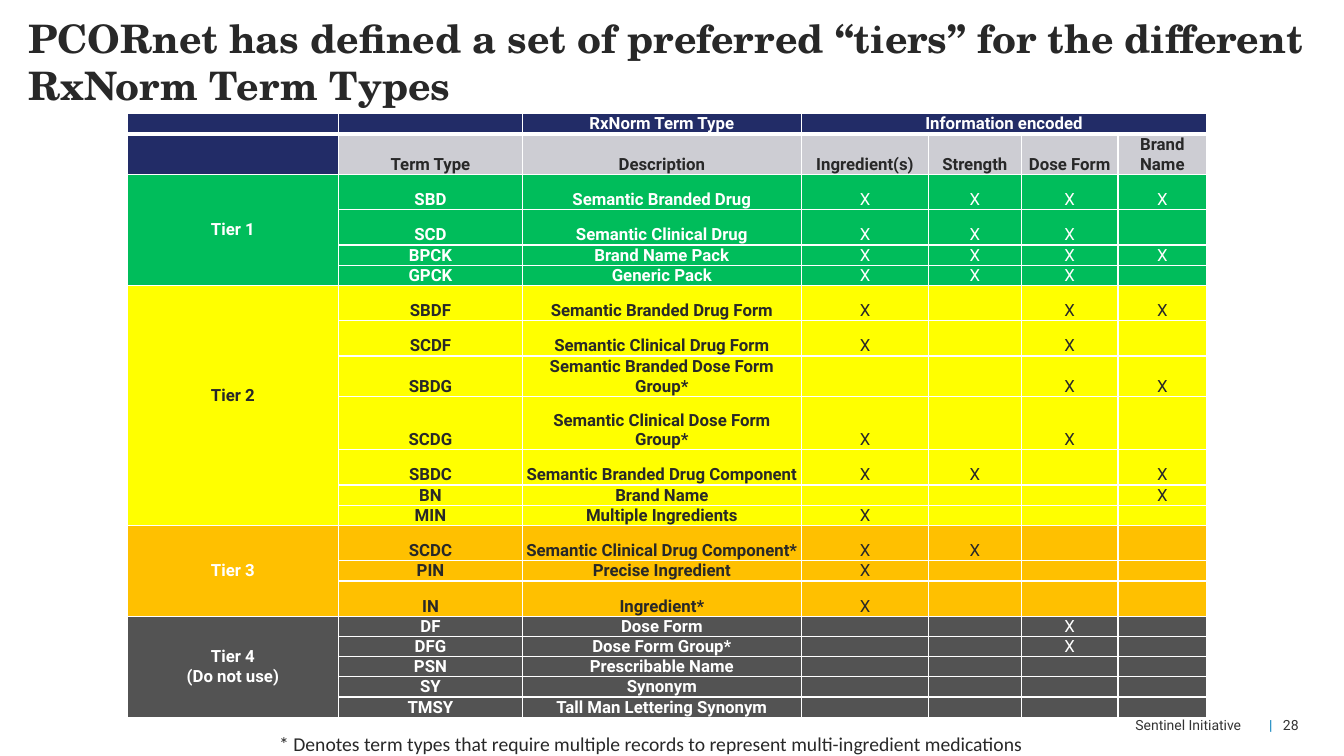
from lxml.etree import SubElement
from pptx import Presentation
from pptx.dml.color import RGBColor
from pptx.enum.text import MSO_ANCHOR as ANCHOR, MSO_AUTO_SIZE as AUTO, PP_ALIGN as ALIGN
from pptx.oxml.ns import qn
from pptx.util import Pt

PX = 9144
WHITE, INK, NAVY, SILVER, FOOTER, BLUE = "FFFFFF", "282828", "222C67", "CDCDD3", "343434", "007CBA"
COLUMNS = [210, 182, 277, 126, 92, 96, 88]
HEADINGS = ["Term Type", "Description", "Ingredient(s)", "Strength", "Dose Form", "Brand Name"]
TIERS = [
    (["Tier 1"], "00BD5B", WHITE, WHITE, [
        ("SBD", "Semantic Branded Drug", "XXXX", 35),
        ("SCD", "Semantic Clinical Drug", "XXX-", 35),
        ("BPCK", "Brand Name Pack", "XXXX", 20),
        ("GPCK", "Generic Pack", "XXX-", 20),
    ]),
    (["Tier 2"], "FFFF00", INK, INK, [
        ("SBDF", "Semantic Branded Drug Form", "X-XX", 35),
        ("SCDF", "Semantic Clinical Drug Form", "X-X-", 35),
        ("SBDG", "Semantic Branded Dose Form Group*", "--XX", 38),
        ("SCDG", "Semantic Clinical Dose Form Group*", "X-X-", 53),
        ("SBDC", "Semantic Branded Drug Component", "XX-X", 35),
        ("BN", "Brand Name", "---X", 20),
        ("MIN", "Multiple Ingredients", "X---", 20),
    ]),
    (["Tier 3"], "FFC000", WHITE, INK, [
        ("SCDC", "Semantic Clinical Drug Component*", "XX--", 35),
        ("PIN", "Precise Ingredient", "X---", 20),
        ("IN", "Ingredient*", "X---", 35),
    ]),
    (["Tier 4", "(Do not use)"], "535353", WHITE, WHITE, [
        ("DF", "Dose Form", "--X-", 20),
        ("DFG", "Dose Form Group*", "--X-", 20),
        ("PSN", "Prescribable Name", "----", 20),
        ("SY", "Synonym", "----", 20),
        ("TMSY", "Tall Man Lettering Synonym", "----", 20),
    ]),
]


def rgb(value):
    """Turn a hex string into a colour."""
    return RGBColor.from_string(value)


def px(*lengths):
    """Turn pixel lengths into EMU."""
    return [n * PX for n in lengths]


def add_run(p, text, size, font, color, bold=False):
    """Append one formatted run to a paragraph."""
    r = p.add_run()
    r.text = text
    r.font.size, r.font.name, r.font.bold = Pt(size), font, bold
    r.font.color.rgb = rgb(color)


def set_margins(target, left, top, right, bottom):
    """Set the inner margins of a text frame or cell."""
    target.margin_left, target.margin_top, target.margin_right, target.margin_bottom = px(
        left, top, right, bottom)


def add_title(s, text):
    """Place and format the title placeholder."""
    sp = s.shapes.title
    sp.left, sp.top, sp.width, sp.height = px(28, 14, 1269, 98)
    tf = sp.text_frame
    tf.word_wrap, tf.auto_size, tf.vertical_anchor = True, AUTO.NONE, ANCHOR.TOP
    set_margins(tf, 0, 0, 0, 0)
    p = tf.paragraphs[0]
    p.alignment = ALIGN.LEFT
    add_run(p, text, 28, "TeX Gyre Schola", INK, True)


def add_text(s, box, runs, size, font, align, anchor, margins):
    """Add a one-paragraph text box from (text, colour) runs."""
    tf = s.shapes.add_textbox(*px(*box)).text_frame
    tf.word_wrap, tf.vertical_anchor = True, anchor
    set_margins(tf, *margins)
    p = tf.paragraphs[0]
    p.alignment = align
    for text, color in runs:
        add_run(p, text, size, font, color)


def add_borders(cell, top, bottom):
    """Draw white borders round a cell, with top and bottom widths in points."""
    tcPr = cell._tc.get_or_add_tcPr()
    for i, (side, width) in enumerate(zip("LRTB", (1, 1, top, bottom))):
        ln = SubElement(tcPr, qn(f"a:ln{side}"), w=str(Pt(width)))
        SubElement(SubElement(ln, qn("a:solidFill")), qn("a:srgbClr"), val=WHITE)
        tcPr.insert(i, ln)


def fill_cell(cell, lines, fill, color=WHITE, bold=True, anchor=ANCHOR.BOTTOM, below=0):
    """Colour a cell and write its centred lines."""
    cell.fill.solid()
    cell.fill.fore_color.rgb = rgb(fill)
    cell.vertical_anchor = anchor
    set_margins(cell, 3, 0, 3, below)
    p = cell.text_frame.paragraphs[0]
    p.alignment = ALIGN.CENTER
    for i, line in enumerate(lines):
        if i:
            p.add_line_break()
        add_run(p, line, 12, "Roboto", color, bold)
    if not lines:
        SubElement(p._p, qn("a:endParaRPr"), sz="1200").append(
            p._p.makeelement(qn("a:latin"), typeface="Roboto"))


def add_header(table):
    """Write the two heading rows."""
    for col, text in enumerate(["", "", "RxNorm Term Type", "Information encoded", "", "", ""]):
        fill_cell(table.cell(0, col), [text] if text else [], NAVY, anchor=ANCHOR.TOP)
    table.cell(0, 3).merge(table.cell(0, 6))
    fill_cell(table.cell(1, 0), [], NAVY)
    for col, text in enumerate(HEADINGS, 1):
        fill_cell(table.cell(1, col), [text], SILVER, INK)


def add_tier(table, first, tier):
    """Write one tier from its first row and return the row after it."""
    name, fill, name_color, color, terms = tier
    for row, (code, description, marks, _) in enumerate(terms, first):
        fill_cell(table.cell(row, 0), name if row == first else [], fill, name_color,
                  anchor=ANCHOR.MIDDLE, below=20 if name == ["Tier 2"] else 0)
        for col, text in enumerate([code, description], 1):
            fill_cell(table.cell(row, col), [text], fill, color)
        for col, mark in enumerate(marks, 3):
            fill_cell(table.cell(row, col), ["X"] if mark == "X" else [], fill, color, False)
    end = first + len(terms)
    table.cell(first, 0).merge(table.cell(end - 1, 0))
    return end


def add_tier_table(s):
    """Build the table of term types by tier."""
    heights = [20, 40] + [term[3] for tier in TIERS for term in tier[4]]
    box = px(126, 113, sum(COLUMNS), sum(heights))
    table = s.shapes.add_table(len(heights), len(COLUMNS), *box).table
    table.first_row = table.horz_banding = False
    for col, width in zip(table.columns, px(*COLUMNS)):
        col.width = width
    for row, height in zip(table.rows, px(*heights)):
        row.height = height
    add_header(table)
    row = 2
    for tier in TIERS:
        row = add_tier(table, row, tier)
    for i in range(len(heights)):
        for j in range(len(COLUMNS)):
            add_borders(table.cell(i, j), 3 if i == 1 else 1, 3 if i == 0 else 1)


def main():
    """Build and save the slide."""
    prs = Presentation()
    prs.slide_width, prs.slide_height = px(1333, 750)
    s = prs.slides.add_slide(prs.slide_layouts[5])
    add_title(s, "PCORnet has defined a set of preferred “tiers” for the different RxNorm Term Types")
    footer = (10, "Roboto", ALIGN.RIGHT, ANCHOR.MIDDLE, (10, 10, 0, 10))
    add_text(s, (1231, 701, 57, 37), [("|   ", BLUE), ("28", FOOTER)], *footer)
    add_text(s, (911, 701, 320, 37), [("Sentinel Initiative", FOOTER)], *footer)
    add_tier_table(s)
    note = "* Denotes term types that require multiple records to represent multi-ingredient medications"
    add_text(s, (267, 721, 799, 34), [(note, INK)], 14, "Calibri", ALIGN.LEFT, ANCHOR.TOP,
             (10, 5, 10, 5))
    prs.save("out.pptx")


if __name__ == "__main__":
    main()
